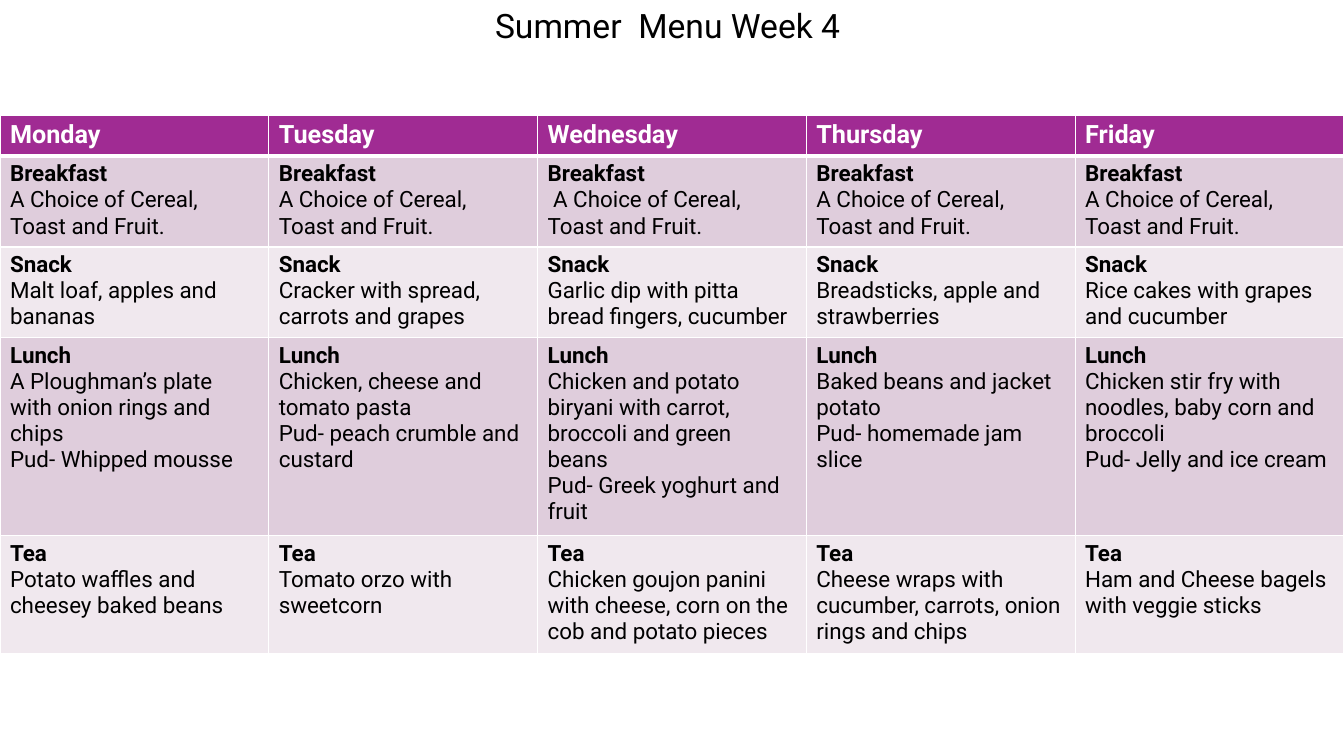
from dataclasses import dataclass

from lxml import etree
from pptx import Presentation, util as u
from pptx.dml.color import RGBColor
from pptx.enum import text as t
from pptx.oxml import ns

PX = 9144
FONT = "Roboto"
HUES = {
    "head": "A02B93",
    "dark": "DFCDDC",
    "pale": "F0E8EE",
    "white": "FFFFFF",
    "black": "000000",
}
DAYS = ["Monday", "Tuesday", "Wednesday", "Thursday", "Friday"]
CEREAL = "A Choice of Cereal, Toast and Fruit."


@dataclass
class Meal:
    name: str
    fill: str
    food: list[list[str]]


MEALS = [
    Meal("Breakfast", "dark", [
        [CEREAL], [CEREAL], [" " + CEREAL], [CEREAL], [CEREAL],
    ]),
    Meal("Snack", "pale", [
        ["Malt loaf, apples and bananas"],
        ["Cracker with spread, carrots and grapes"],
        ["Garlic dip with pitta bread fingers, cucumber"],
        ["Breadsticks, apple and strawberries"],
        ["Rice cakes with grapes and cucumber"],
    ]),
    Meal("Lunch", "dark", [
        ["A Ploughman’s plate with onion rings and chips", "Pud- Whipped mousse"],
        ["Chicken, cheese and tomato pasta", "Pud- peach crumble and custard"],
        ["Chicken and potato biryani with carrot, broccoli and green beans",
         "Pud- Greek yoghurt and fruit"],
        ["Baked beans and jacket potato", "Pud- homemade jam slice"],
        ["Chicken stir fry with noodles, baby corn and broccoli",
         "Pud- Jelly and ice cream"],
    ]),
    Meal("Tea", "pale", [
        ["Potato waffles and cheesey baked beans"],
        ["Tomato orzo with sweetcorn"],
        ["Chicken goujon panini with cheese, corn on the cob and potato pieces"],
        ["Cheese wraps with cucumber, carrots, onion rings and chips"],
        ["Ham and Cheese bagels with veggie sticks"],
    ]),
]


def px(n: int) -> u.Emu:
    return u.Emu(n * PX)


def add_run(para, words: str, size: int, hue: str, bold: bool = False) -> None:
    run = para.add_run()
    run.text = words
    run.font.name = FONT
    run.font.size = u.Pt(size)
    run.font.bold = bold
    run.font.color.rgb = RGBColor.from_string(HUES[hue])


def edge(cell, side: str, width: int) -> None:
    props = cell._tc.get_or_add_tcPr()
    line = etree.SubElement(props, ns.qn(f"a:ln{side}"), w=str(u.Pt(width)))
    fill = etree.SubElement(line, ns.qn("a:solidFill"))
    etree.SubElement(fill, ns.qn("a:srgbClr"), val=HUES["white"])


def style(cell, hue: str, top: int, base: int) -> None:
    for side, width in {"L": 1, "R": 1, "T": top, "B": base}.items():
        edge(cell, side, width)
    cell.fill.solid()
    cell.fill.fore_color.rgb = RGBColor.from_string(HUES[hue])


def add_title(slide) -> None:
    title = slide.shapes.title
    title.left, title.top, title.width, title.height = map(px, (481, 0, 371, 50))
    frame = title.text_frame
    frame.word_wrap = True
    frame.auto_size = t.MSO_AUTO_SIZE.SHAPE_TO_FIT_TEXT
    frame.vertical_anchor = t.MSO_ANCHOR.TOP
    para = frame.paragraphs[0]
    para.alignment = t.PP_ALIGN.LEFT
    add_run(para, "Summer  Menu Week 4", 24, "black")


def add_menu(slide) -> None:
    menu = slide.shapes.add_table(
        len(MEALS) + 1, len(DAYS), px(0), px(114), px(1333), px(507)
    )
    grid = menu.table
    grid.horz_banding = False
    for row in grid.rows:
        row.height = px(41)
    menu.height = px(507)
    for col, day in enumerate(DAYS):
        head = grid.cell(0, col)
        style(head, "head", 1, 3)
        add_run(head.text_frame.paragraphs[0], day, 18, "white", True)
        for row, meal in enumerate(MEALS, 1):
            cell = grid.cell(row, col)
            style(cell, meal.fill, 3 if row == 1 else 1, 1)
            frame = cell.text_frame
            add_run(frame.paragraphs[0], meal.name, 16, "black", True)
            for dish in meal.food[col]:
                add_run(frame.add_paragraph(), dish, 16, "black")


def main() -> None:
    deck = Presentation()
    deck.slide_width, deck.slide_height = px(1333), px(750)
    slide = deck.slides.add_slide(deck.slide_layouts[5])
    add_title(slide)
    add_menu(slide)
    deck.save("out.pptx")


if __name__ == "__main__":
    main()
